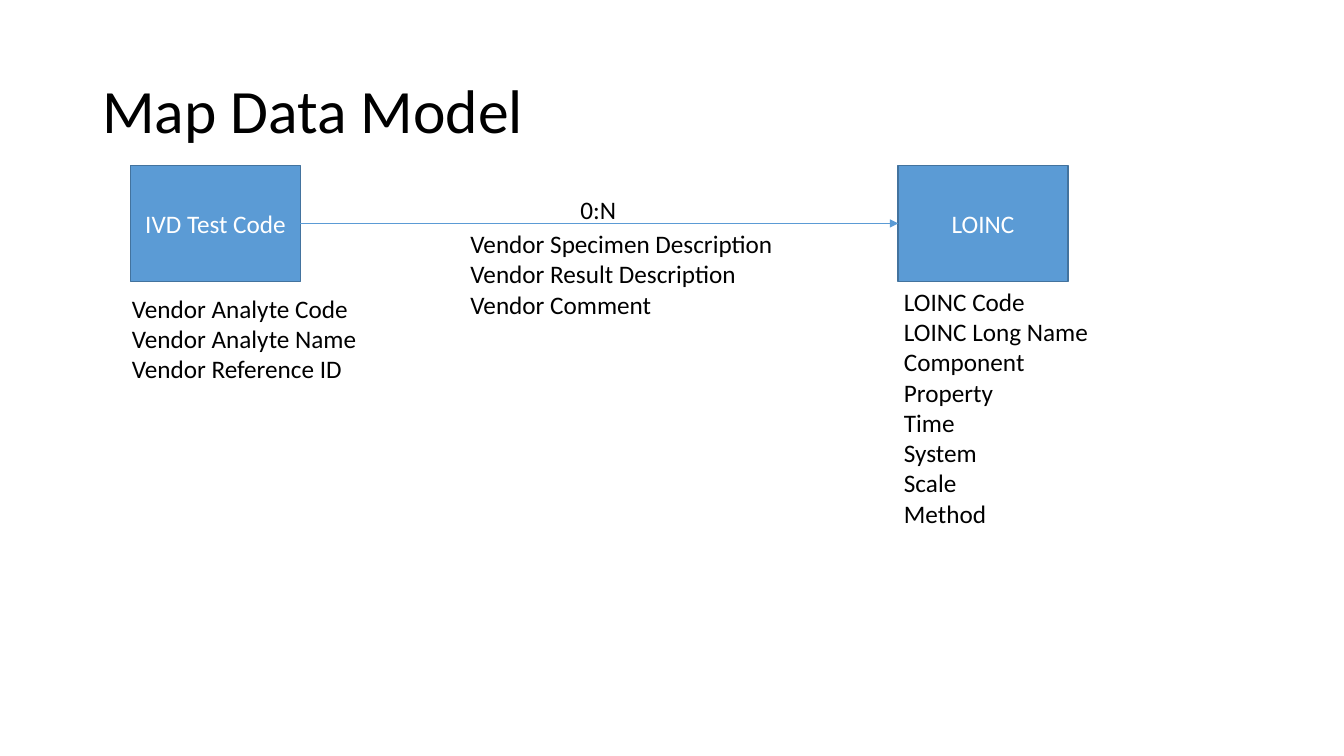
"""Build the Map Data Model slide: a test code mapped to LOINC with their attributes."""
from lxml import etree
from pptx import Presentation
from pptx.dml.color import RGBColor
from pptx.enum import shapes, text
from pptx.oxml.ns import qn
from pptx.util import Pt


def color(hex_code):
    return RGBColor.from_string(hex_code)


def write(shape, lines, size=18, ink="000000", level=0, wrap=True, spacing=None,
          align=text.PP_ALIGN.LEFT, anchor=text.MSO_ANCHOR.TOP,
          fit=text.MSO_AUTO_SIZE.SHAPE_TO_FIT_TEXT):
    frame = shape.text_frame
    frame.text = "\n".join(lines)
    frame.word_wrap = wrap
    frame.auto_size = fit
    frame.vertical_anchor = anchor
    for paragraph in frame.paragraphs:
        paragraph.level = level
        paragraph.alignment = align
        paragraph.line_spacing = spacing
        font = paragraph.runs[0].font
        font.name = "Calibri"
        font.size = Pt(size)
        font.color.rgb = color(ink)


deck = Presentation()
deck.slide_width, deck.slide_height = Pt(960), Pt(540)
slide = deck.slides.add_slide(deck.slide_layouts[6])

title = slide.shapes.add_textbox(Pt(66), Pt(28.8), Pt(828), Pt(104.4))
write(title, ["Map Data Model"], size=44, spacing=0.9,
      anchor=text.MSO_ANCHOR.MIDDLE, fit=text.MSO_AUTO_SIZE.NONE)

entity_top, entity_width, entity_height = 118.2, 121.2, 82.8
test_code_left, loinc_left = 93.4, 641.6
for label, left in [("IVD Test Code", test_code_left), ("LOINC", loinc_left)]:
    entity = slide.shapes.add_shape(shapes.MSO_SHAPE.RECTANGLE, Pt(left), Pt(entity_top),
                                    Pt(entity_width), Pt(entity_height))
    entity.shadow.inherit = False
    entity.fill.solid()
    entity.fill.fore_color.rgb = color("5B9BD5")
    entity.line.color.rgb = color("43739E")
    entity.line.width = Pt(1)
    write(entity, [label], ink="FFFFFF", align=text.PP_ALIGN.CENTER,
          anchor=text.MSO_ANCHOR.MIDDLE, fit=text.MSO_AUTO_SIZE.NONE)

attribute_lists = [
    (530.6, 200.9, 291.6, 181.4, 3,
     ["LOINC Code", "LOINC Long Name", "Component", "Property",
      "Time", "System", "Scale", "Method"]),
    (15.1, 205.9, 274.3, 72.7, 2,
     ["Vendor Analyte Code", "Vendor Analyte Name", "Vendor Reference ID"]),
    (221, 159.6, 362.2, 72.7, 3,
     ["Vendor Specimen Description", "Vendor Result Description", "Vendor Comment"]),
]
for left, top, width, height, level, attributes in attribute_lists:
    attribute_box = slide.shapes.add_textbox(Pt(left), Pt(top), Pt(width), Pt(height))
    write(attribute_box, attributes, level=level)

mapping_y = entity_top + entity_height / 2
mapping = slide.shapes.add_connector(shapes.MSO_CONNECTOR.STRAIGHT,
                                     Pt(test_code_left + entity_width), Pt(mapping_y),
                                     Pt(loinc_left), Pt(mapping_y))
mapping.line.color.rgb = color("5B9BD5")
mapping.line.width = Pt(0.5)
etree.SubElement(mapping.line._get_or_add_ln(), qn("a:tailEnd"), type="triangle")
etree.SubElement(mapping._element.spPr, qn("a:effectLst"))

cardinality = slide.shapes.add_textbox(Pt(407.5), Pt(135.4), Pt(40.3), Pt(29.1))
write(cardinality, ["0:N"], wrap=False)

deck.save("out.pptx")
